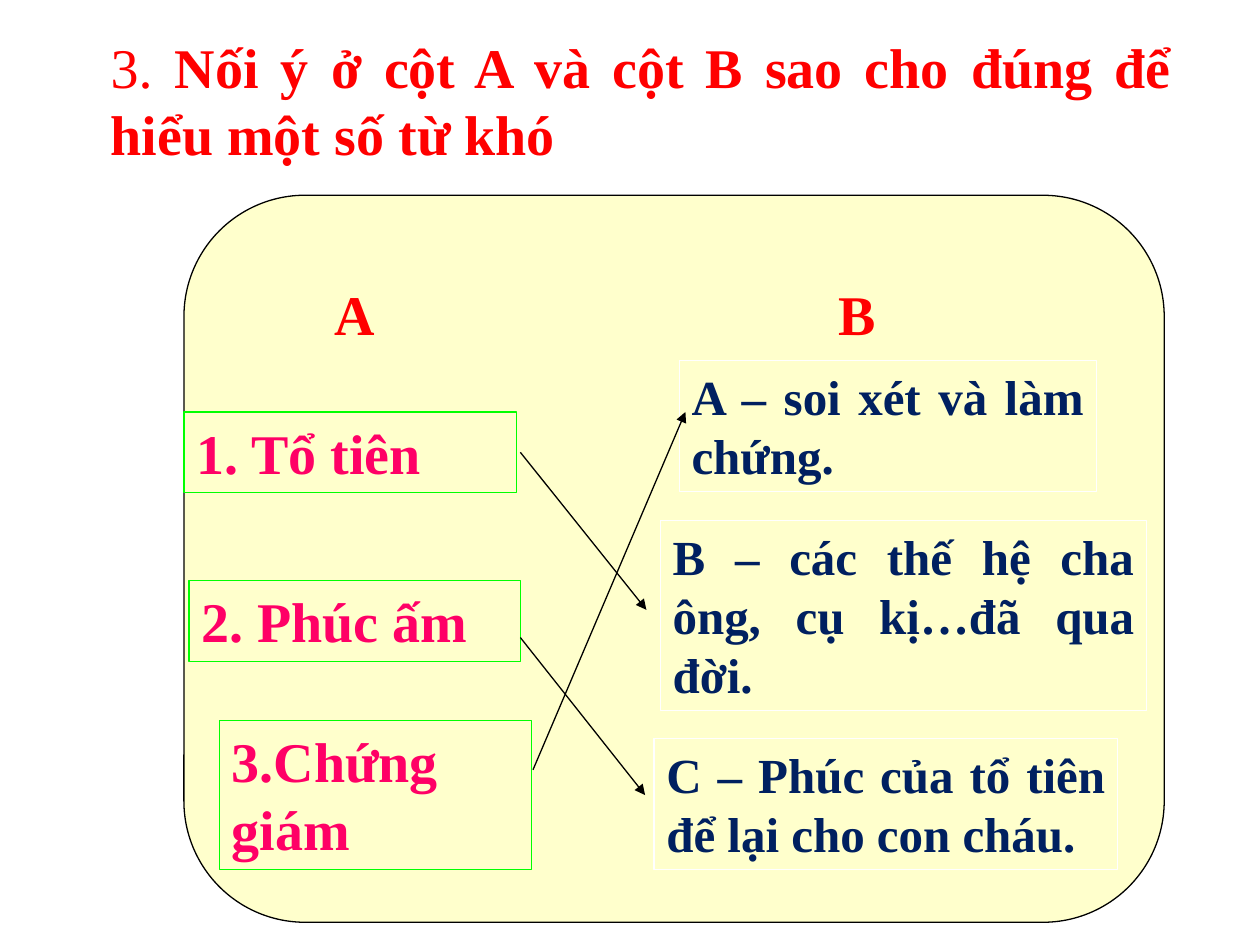
from dataclasses import dataclass

from lxml.etree import SubElement
from pptx import Presentation
from pptx.dml.color import RGBColor
from pptx.enum.shapes import MSO_CONNECTOR, MSO_SHAPE
from pptx.enum.text import MSO_ANCHOR, MSO_AUTO_SIZE, PP_ALIGN
from pptx.oxml.ns import qn
from pptx.slide import Slide
from pptx.util import Inches, Pt

TERMS = [
    ("1. Tổ tiên", (1.46, 3.27, 2.64, 0.64)),
    ("2. Phúc ấm", (1.5, 4.61, 2.63, 0.64)),
    ("3.Chứng giám", (1.74, 5.72, 2.48, 1.18)),
]
MEANINGS = [
    ("A – soi xét và làm chứng.", (5.39, 2.86, 3.31, 1.04)),
    ("B – các thế hệ cha ông, cụ kị…đã qua đời.", (5.24, 4.13, 3.86, 1.51)),
    ("C – Phúc của tổ tiên để lại cho con cháu.", (5.19, 5.86, 3.68, 1.04)),
]
MATCHES = [
    ((4.13, 3.59), (5.13, 4.84)),
    ((4.13, 5.06), (5.12, 6.31)),
    ((4.23, 6.11), (5.44, 3.27)),
]


def color(value):
    """Turn a hex string into a colour."""
    return RGBColor.from_string(value)


def add_text(paragraph, text, *, font, size, fill, bold=True):
    """Add one formatted run to a paragraph."""
    run = paragraph.add_run()
    run.text = text
    run.font.name = font
    run.font.size = Pt(size)
    run.font.bold = bold
    run.font.color.rgb = color(fill)


@dataclass
class MatchingSlide:
    """Hold the style and the slide being built."""

    slide: Slide
    font: str = "Times New Roman"
    heading: str = "FF0000"
    ink: str = "000000"
    line_width: float = 0.75

    def box(self, kind, bounds, line, fill=None):
        """Add an outlined preset shape."""
        shape = self.slide.shapes.add_shape(kind, *map(Inches, bounds))
        shape.shadow.inherit = False
        if fill:
            shape.fill.solid()
            shape.fill.fore_color.rgb = color(fill)
        else:
            shape.fill.background()
        shape.line.color.rgb = color(line)
        shape.line.width = Pt(self.line_width)
        return shape

    def paragraph(self, shape, align):
        """Prepare a shape's text frame and return its paragraph."""
        frame = shape.text_frame
        frame.word_wrap = True
        frame.auto_size = MSO_AUTO_SIZE.SHAPE_TO_FIT_TEXT
        frame.vertical_anchor = MSO_ANCHOR.TOP
        paragraph = frame.paragraphs[0]
        paragraph.alignment = align
        return paragraph

    def card(self, text, bounds, line, size, fill):
        """Add a framed, justified text card."""
        shape = self.box(MSO_SHAPE.RECTANGLE, bounds, line)
        paragraph = self.paragraph(shape, PP_ALIGN.JUSTIFY)
        add_text(paragraph, text, font=self.font, size=size, fill=fill)

    def label(self, bounds, *parts, align=PP_ALIGN.LEFT):
        """Add a heading made of (text, bold) parts."""
        shape = self.slide.shapes.add_textbox(*map(Inches, bounds))
        paragraph = self.paragraph(shape, align)
        for text, bold in parts:
            add_text(paragraph, text, font=self.font, size=32, fill=self.heading, bold=bold)

    def arrow(self, start, end):
        """Add a straight arrow between two points."""
        connector = self.slide.shapes.add_connector(
            MSO_CONNECTOR.STRAIGHT, *map(Inches, start + end)
        )
        connector.line.color.rgb = color(self.ink)
        connector.line.width = Pt(self.line_width)
        SubElement(connector.line._get_or_add_ln(), qn("a:tailEnd"), type="triangle")
        SubElement(connector._element.spPr, qn("a:effectLst"))


def main():
    """Build and save the matching exercise."""
    presentation = Presentation()
    presentation.slide_width = Inches(10)
    presentation.slide_height = Inches(7.5)
    page = MatchingSlide(presentation.slides.add_slide(presentation.slide_layouts[6]))

    page.box(MSO_SHAPE.FLOWCHART_ALTERNATE_PROCESS, (1.46, 1.55, 7.78, 5.77), page.ink, "FFFFCC")
    for letter, left in (("A", 2.56), ("B", 6.56)):
        page.label((left, 2.17, 0.44, 0.63), (letter, True))
    for term, meaning in zip(TERMS, MEANINGS):
        page.card(*term, line="00FF00", size=32, fill="FF0066")
        page.card(*meaning, line="FFFFFF", size=28, fill="002060")
    page.label(
        (0.78, 0.21, 8.62, 1.18),
        ("3. ", False),
        ("Nối ý ở cột A và cột B sao cho đúng để hiểu một số từ khó", True),
        align=PP_ALIGN.JUSTIFY,
    )
    for start, end in MATCHES:
        page.arrow(start, end)

    presentation.save("out.pptx")


if __name__ == "__main__":
    main()
